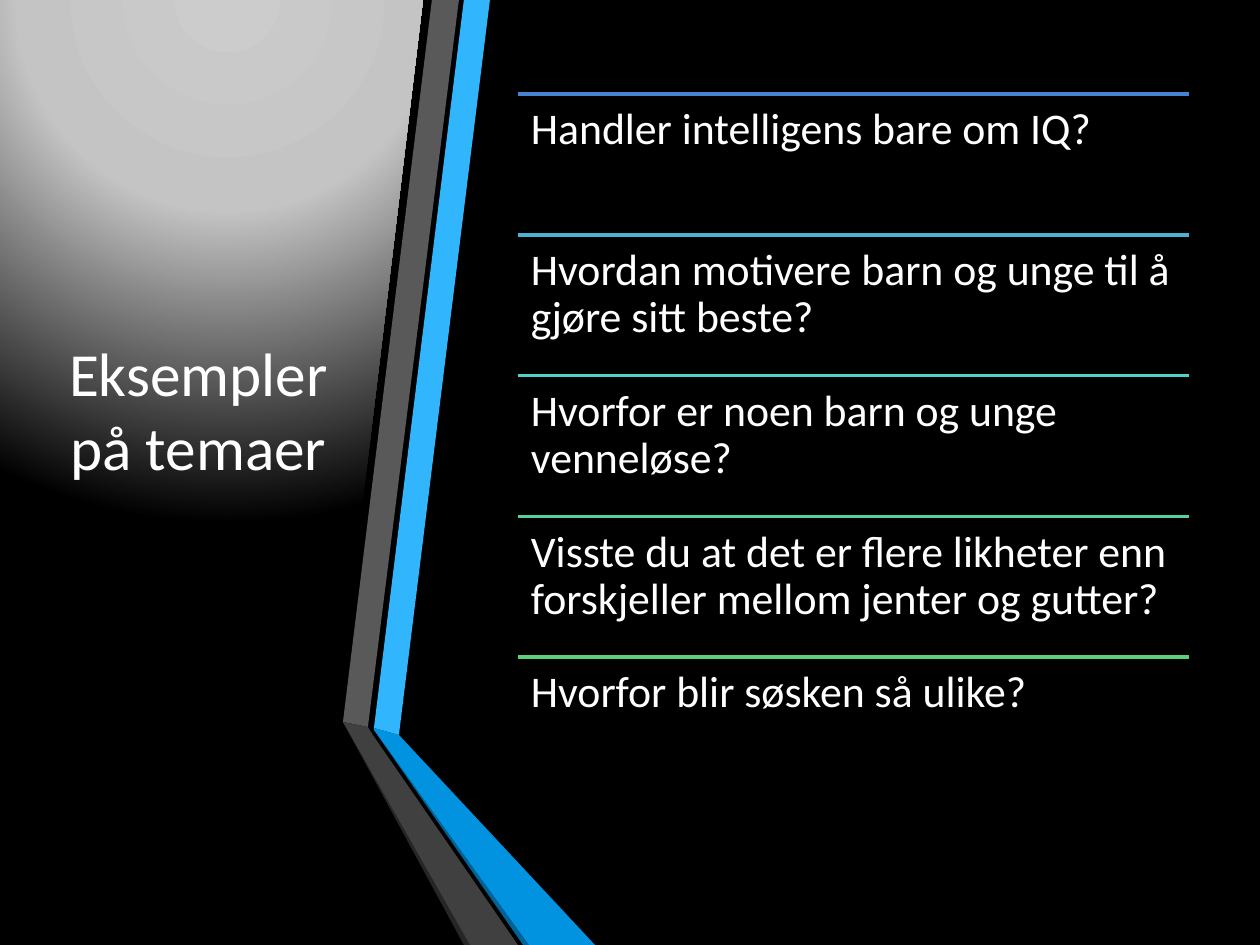
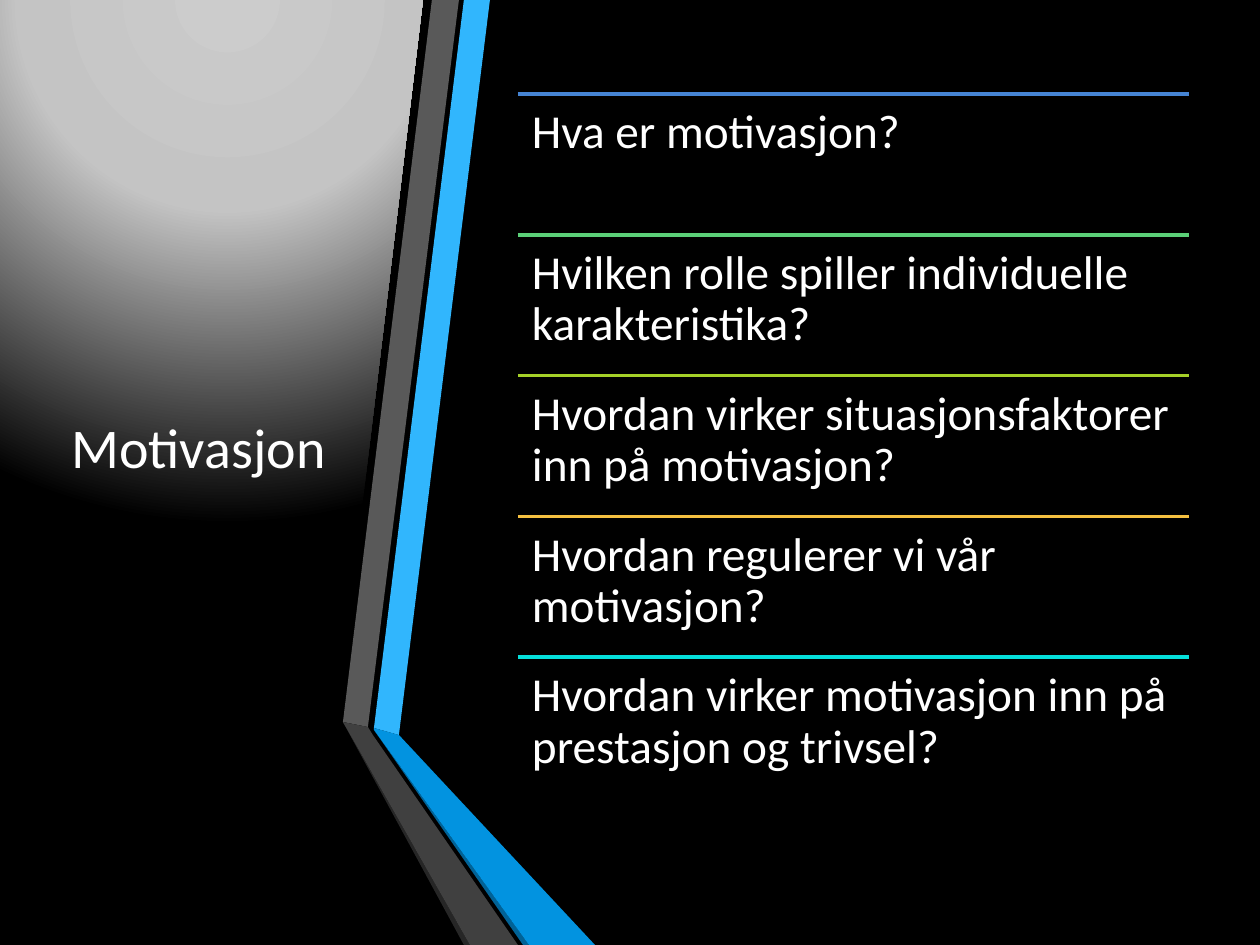
from pptx import Presentation
from pptx.dml.color import RGBColor
from pptx.enum.shapes import MSO_CONNECTOR as CONN
from pptx.enum.text import MSO_ANCHOR as ANCHOR, MSO_AUTO_SIZE as AUTO, PP_ALIGN as ALIGN
from pptx.oxml import parse_xml
from pptx.oxml.ns import nsdecls
from pptx.util import Emu, Pt
from lxml.etree import SubElement

SCALE = 914400 / 126
W, H = 1260, 945
FONT, BLACK, WHITE = "Calibri", "000000", "FFFFFF"
TITLE_BOX = (55, 94, 287, 704)
LIST_BOX = (518, 94, 671, 704)
PANEL = [(0, 0), (423, 0), (336, 725), (336, 726), (455, 945), (0, 945)]
PANEL_STOPS = [(0, "CCCCCC"), (40, "C4C4C4"), (100, BLACK)]
RIBBONS = [
    ("31B6FD", [(374, 728), (399, 735), (490, 0), (464, 0)]),
    ("595959", [(459, 0), (432, 0), (343, 722), (368, 727)]),
    ("262626", [(343, 722), (464, 945), (470, 945)]),
    ("016296", [(374, 730), (523, 945), (529, 945)]),
    ("0293E0", [(374, 730), (529, 945), (595, 945), (399, 735), (374, 728)]),
    ("404040", [(518, 945), (373, 735), (368, 727), (343, 722), (470, 945)]),
]
TOPICS = [
    dict(title="Eksempler på temaer", title_size=35, title_lift=74, size=25, inset=13, rows=[
        ("4584D3", "Handler intelligens bare om IQ?"),
        ("4BB3D2", "Hvordan motivere barn og unge til å gjøre sitt beste?"),
        ("50D1C5", "Hvorfor er noen barn og unge venneløse?"),
        ("56D19C", "Visste du at det er flere likheter enn forskjeller mellom jenter og gutter?"),
        ("5BD078", "Hvorfor blir søsken så ulike?")]),
    dict(title="Motivasjon", title_size=32, title_lift=0, size=27, inset=14, rows=[
        ("4584D3", "Hva er motivasjon?"),
        ("5BD078", "Hvilken rolle spiller individuelle karakteristika?"),
        ("A5D028", "Hvordan virker situasjonsfaktorer inn på motivasjon?"),
        ("F5C040", "Hvordan regulerer vi vår motivasjon?"),
        ("05E0DB", "Hvordan virker motivasjon inn på prestasjon og trivsel?")]),
]


def px(n):
    """Turn pixels into EMU."""
    return Emu(round(n * SCALE))


def rgb(color):
    """Turn a hex string into a colour."""
    return RGBColor.from_string(color)


def apply(obj, **values):
    """Set each named attribute on an object."""
    for name, value in values.items():
        setattr(obj, name, value)


def write(tf, text, size, **paragraph):
    """Write one white paragraph into a text frame."""
    p = tf.paragraphs[0]
    apply(p, **paragraph)
    r = p.add_run()
    r.text = text
    apply(r.font, name=FONT, size=Pt(size), bold=False)
    r.font.color.rgb = rgb(WHITE)


def outline(shapes, points, color):
    """Draw a filled polygon without a border."""
    fb = shapes.build_freeform(*points[0], scale=SCALE)
    fb.add_line_segments(points[1:], close=True)
    sp = fb.convert_to_shape()
    sp.shadow.inherit = False
    sp.fill.solid()
    sp.fill.fore_color.rgb = rgb(color)
    sp.line.fill.background()
    return sp


def glow(sp, stops):
    """Give a shape a circular gradient centred above its top edge."""
    gs = "".join(f'<a:gs pos="{pos * 1000}"><a:srgbClr val="{color}"/></a:gs>' for pos, color in stops)
    grad = parse_xml(
        f'<a:gradFill {nsdecls("a")} rotWithShape="1"><a:gsLst>{gs}</a:gsLst><a:path path="circle">'
        '<a:fillToRect l="50000" t="-80000" r="50000" b="180000"/></a:path></a:gradFill>')
    spPr = sp._element.spPr
    spPr.replace(spPr.find("{*}solidFill"), grad)


def add_frame(s):
    """Draw the black background, the lit panel and the folded ribbons."""
    s.background.fill.solid()
    s.background.fill.fore_color.rgb = rgb(BLACK)
    glow(outline(s.shapes, PANEL, BLACK), PANEL_STOPS)
    ribbons = s.shapes.add_group_shape()
    for color, points in RIBBONS:
        outline(ribbons.shapes, points, color)


def add_title(s, box, text, size, lift):
    """Place the title in its box, with room of the given height kept below it."""
    title = s.shapes.title
    s.shapes._spTree.append(title._element)
    left, top, width, height = map(px, box)
    apply(title, left=left, top=top, width=width, height=height)
    tf = title.text_frame
    apply(tf, word_wrap=True, auto_size=AUTO.NONE, vertical_anchor=ANCHOR.MIDDLE,
          margin_bottom=px(6 + lift))
    write(tf, text, size, alignment=ALIGN.CENTER)


def add_ruled_list(s, box, rows, size, inset):
    """Share the box evenly between rows, each a coloured rule with text below."""
    x, y, w, h = box
    step = h / len(rows)
    shapes = s.shapes.add_group_shape().shapes
    for i, (color, text) in enumerate(rows):
        top = y + i * step
        rule = shapes.add_connector(CONN.STRAIGHT, px(x), px(top), px(x + w), px(top))
        SubElement(rule._element.spPr, "{http://schemas.openxmlformats.org/drawingml/2006/main}effectLst")
        rule.line.color.rgb = rgb(color)
        rule.line.width = Pt(2)
        tf = shapes.add_textbox(px(x), px(top), px(w), px(step)).text_frame
        apply(tf, word_wrap=True, vertical_anchor=ANCHOR.TOP,
              **{f"margin_{side}": px(inset) for side in ("left", "top", "right", "bottom")})
        write(tf, text, size, line_spacing=0.9, alignment=ALIGN.LEFT)


def add_topic_slide(prs, topic):
    """Build one slide with a title on the left and a ruled list on the right."""
    s = prs.slides.add_slide(prs.slide_layouts[5])
    add_frame(s)
    add_title(s, TITLE_BOX, topic["title"], topic["title_size"], topic["title_lift"])
    add_ruled_list(s, LIST_BOX, topic["rows"], topic["size"], topic["inset"])


def main():
    """Build the presentation and save it."""
    prs = Presentation()
    apply(prs, slide_width=px(W), slide_height=px(H))
    for topic in TOPICS:
        add_topic_slide(prs, topic)
    prs.save("out.pptx")


if __name__ == "__main__":
    main()
